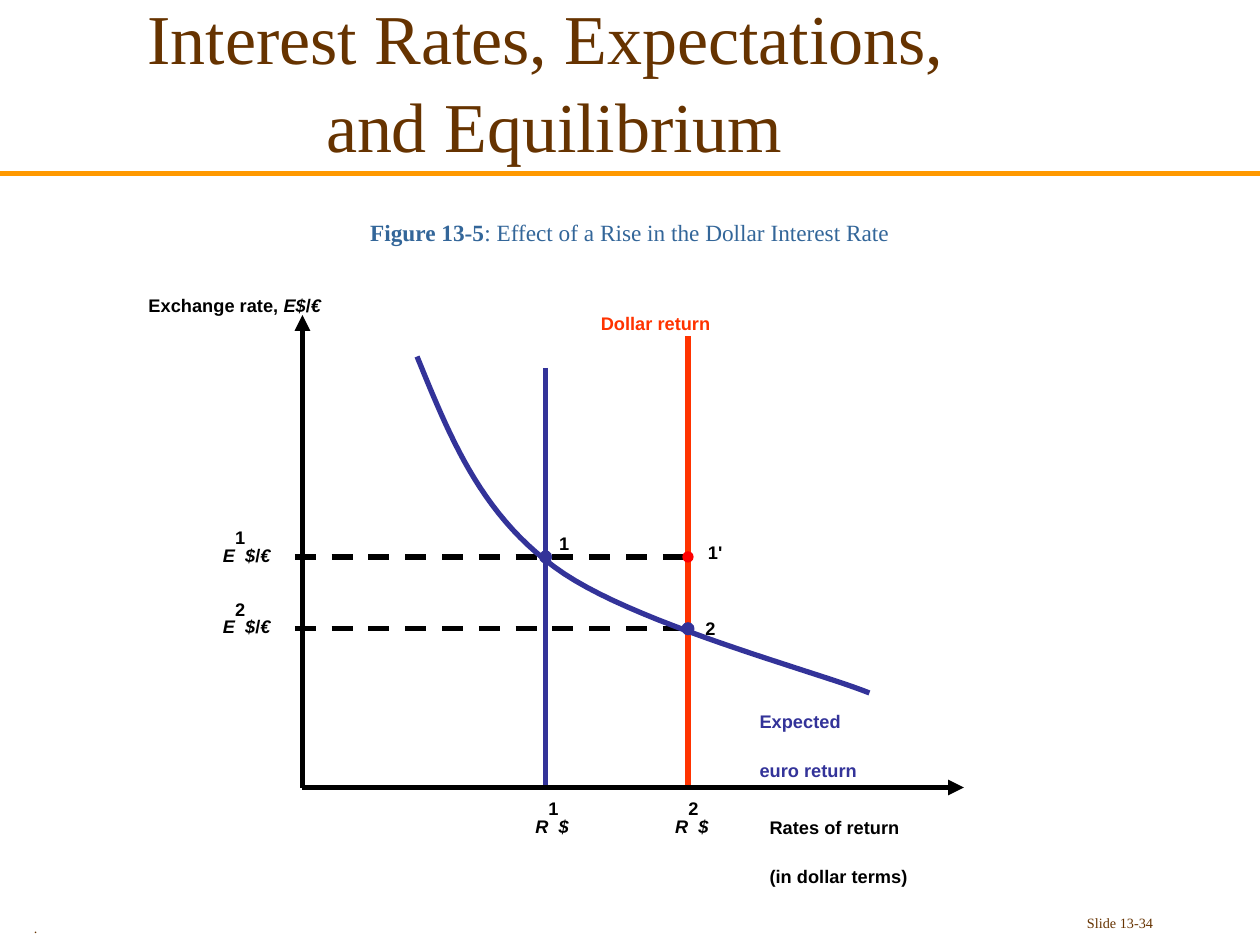
from lxml.etree import SubElement
from pptx import Presentation
from pptx.dml.color import RGBColor
from pptx.enum.dml import MSO_LINE
from pptx.enum.shapes import MSO_CONNECTOR, MSO_SHAPE
from pptx.enum.text import MSO_ANCHOR, PP_ALIGN
from pptx.oxml.ns import qn
from pptx.util import Inches, Pt

HUES = {name: RGBColor.from_string(code) for name, code in {
    "brown": "663300", "gold": "FF9900", "steel": "336699", "black": "000000",
    "blue": "333399", "orange": "FF3300", "red": "FF0000"}.items()}
LOW, HIGH = "-25000", "30000"  # text baselines; labels sit low, indices high

deck = Presentation()
deck.slide_width, deck.slide_height = Inches(10), Inches(7.5)
slide = deck.slides.add_slide(deck.slide_layouts[6])
shapes = slide.shapes
cell = deck.slide_width // 100  # grid of 100 columns by 75 rows


def write(x, y, w, h, paras, hue="black", size=18, face="Arial",
          align=PP_ALIGN.LEFT, anchor=MSO_ANCHOR.TOP, base=LOW):
    """Add a text box; each paragraph is a list of (text, marks): b, i, ^."""
    frame = shapes.add_textbox(*(int(n * cell) for n in (x, y, w, h))).text_frame
    frame.word_wrap = True
    frame.vertical_anchor = anchor
    frame.text = "\n" * (len(paras) - 1)
    for k, (para, parts) in enumerate(zip(frame.paragraphs, paras)):
        para.alignment = align
        if k:
            para.space_before = Pt(size * 0.2)
        for text, marks in parts:
            run = para.add_run()
            run.text = text
            font = run.font
            font.name, font.size, font.color.rgb = face, Pt(size), HUES[hue]
            font.bold, font.italic = "b" in marks, "i" in marks
            if base:
                run._r.get_or_add_rPr().set("baseline", HIGH if "^" in marks else base)
    return frame


def draw(x1, y1, x2, y2, hue, dash=False, arrow=False):
    line = shapes.add_connector(MSO_CONNECTOR.STRAIGHT,
                                *(int(n * cell) for n in (x1, y1, x2, y2)))
    line.line.width = Pt(3)
    line.line.color.rgb = HUES[hue]
    if dash:
        line.line.dash_style = MSO_LINE.DASH
    if arrow:
        SubElement(line.line._get_or_add_ln(), qn("a:tailEnd"), type="triangle")
    SubElement(line._element.spPr, qn("a:effectLst"))


# Title, rule, caption and footer
serif = "Times New Roman"
title = write(0.8, 0, 85, 12.5, [[("Interest Rates, Expectations,", "")]], "brown", 40,
              serif, PP_ALIGN.CENTER, MSO_ANCHOR.MIDDLE, None)
head = title.paragraphs[0]
head.runs[0].text = "Interest Rates, Expectations,"
head.add_line_break()
tail = head.add_run()
tail.text = " and Equilibrium"
tail.font.name, tail.font.size, tail.font.color.rgb = serif, Pt(40), HUES["brown"]
head.line_spacing = 1.04
draw(0, 13.8, 100, 13.8, "gold")
write(0, 15, 100, 5, [[("Figure 13-5", "b"),
                       (": Effect of a Rise in the Dollar Interest Rate", "")]],
      "steel", 23, serif, PP_ALIGN.CENTER, MSO_ANCHOR.BOTTOM)
write(71.7, 70.8, 20.8, 3, [[("Slide 13-34", "")]], "brown", 14, serif, PP_ALIGN.RIGHT)
write(1.7, 71.2, 37.5, 3, [[(".", "")]], "brown", 14, serif)

# Axes, return lines and dashed guides
left, floor = 24, 62.5
rate1, rate2 = 43.3, 54.6
level1, level2 = 44.2, 49.9
draw(rate2, 26.7, rate2, floor, "orange")
draw(rate1, 29.2, rate1, floor, "blue")
draw(left, floor, left, 25, "black", arrow=True)
draw(left, floor, 76.5, floor, "black", arrow=True)
for level in (level1, level2):
    draw(23.4, level, 55, level, "black", dash=True)

# Expected euro return: two joined Bezier curves
steps = 24
points = []
for bend in (((33.1, 28.3), (35.6, 34.4), (38, 40.6), (44, 45)),
             ((44, 45), (49.9, 49.4), (64.8, 53.3), (69, 55))):
    for k in range(steps + 1):
        t = k / steps
        mix = ((1 - t) ** 3, 3 * t * (1 - t) ** 2, 3 * t * t * (1 - t), t ** 3)
        points.append([int(cell * sum(m * p[axis] for m, p in zip(mix, bend)))
                       for axis in (0, 1)])
path = shapes.build_freeform(*points[0])
path.add_line_segments(points[1:], close=False)
curve = path.convert_to_shape()
curve.shadow.inherit = False
curve.fill.background()
curve.line.color.rgb = HUES["blue"]
curve.line.width = Pt(3)

# Equilibrium points
size = 0.9
for x, y, hue in ((rate1, level1, "blue"), (rate2, level1, "red"), (rate2, level2, "blue")):
    dot = shapes.add_shape(MSO_SHAPE.OVAL, int((x - size / 2) * cell),
                           int((y - size / 2) * cell), int(size * cell), int(size * cell))
    dot.shadow.inherit = False
    dot.fill.solid()
    dot.fill.fore_color.rgb = HUES[hue]
    if hue == "red":
        dot.line.fill.background()
    else:
        dot.line.color.rgb = HUES[hue]
        dot.line.width = Pt(1)

# Labels
euro = [("$", "bi"), ("/", "b"), ("€", "bi")]
for mark, y in (("1", 41), ("2", 46.7)):
    write(16.7, y, 11.8, 4, [[("E", "bi"), (mark, "b^")] + euro])
for mark, x in (("1", 41.5), ("2", 52.6)):
    write(x, floor, 7, 4, [[("R", "bi"), (mark, "b^"), ("$", "bi")]])
for mark, x, y in (("1", 43.4, 40.1), ("1'", 55.2, 40.8), ("2", 55, 46.8)):
    write(x, y, 4, 4, [[(mark, "b")]])
write(10.8, 21.2, 25.8, 4, [[("Exchange rate, ", "b"), ("E", "bi")] + euro])
write(46.7, 22.6, 17, 4, [[("Dollar return", "b")]], "orange")
write(59.3, 54.2, 18, 7, [[("Expected", "b")], [("euro return", "b")]], "blue")
write(60.1, 62.6, 21, 7, [[("Rates of return", "b")], [("(in dollar terms)", "b")]])

deck.save("out.pptx")
